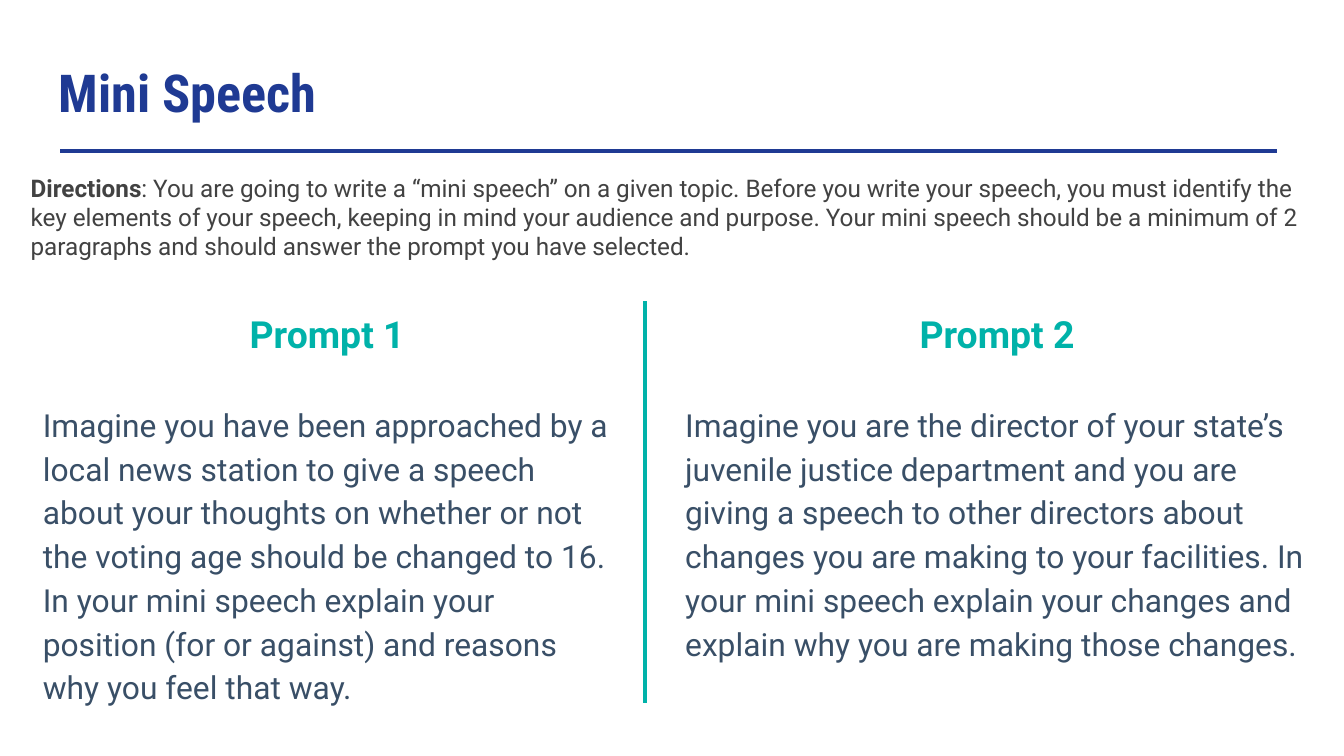
"""Build the "Mini Speech" slide with directions and two writing prompts."""
from dataclasses import dataclass

from lxml import etree
from pptx import Presentation
from pptx.dml.color import RGBColor
from pptx.enum.shapes import MSO_CONNECTOR
from pptx.enum.text import MSO_ANCHOR, PP_ALIGN
from pptx.oxml.ns import qn
from pptx.slide import Slide
from pptx.text.text import TextFrame, _Paragraph
from pptx.util import Cm, Pt

STRAIGHT = MSO_CONNECTOR.STRAIGHT
TOP = MSO_ANCHOR.TOP
LEFT = PP_ALIGN.LEFT
CENTER = PP_ALIGN.CENTER

COLORS = {
    "title": "1F3A93",
    "directions": "424242",
    "accent": "00B2A9",
    "prompt": "394F67",
}
INSET = Cm(0.25)
PROMPT_TOP = 5.51
PROMPT_SPACING = 1.15


@dataclass
class Prompt:
    heading: str
    text: str
    left: float
    width: float
    height: float


@dataclass
class Rule:
    start: tuple[float, float]
    end: tuple[float, float]
    color: str


PROMPTS = [
    Prompt(
        "Prompt 1",
        "Imagine you have been approached by a local news station to give a speech "
        "about your thoughts on whether or not the voting age should be changed to 16. "
        "In your mini speech explain your position (for or against) and reasons why "
        "you feel that way.",
        0.56, 11.25, 10.11,
    ),
    Prompt(
        "Prompt 2",
        "Imagine you are the director of your state’s juvenile justice department and "
        "you are giving a speech to other directors about changes you are making to "
        "your facilities. In your mini speech explain your changes and explain why you "
        "are making those changes.",
        12.7, 12.29, 10.74,
    ),
]
RULES = [
    Rule((1.14, 2.85), (24.13, 2.85), "title"),
    Rule((12.19, 5.69), (12.19, 13.28), "accent"),
]
DIRECTIONS = (
    ": You are going to write a “mini speech” on a given topic. Before you write your "
    "speech, you must identify the key elements of your speech, keeping in mind your "
    "audience and purpose. Your mini speech should be a minimum of 2 paragraphs and "
    "should answer the prompt you have selected."
)


def add_box(page: Slide, left: float, top: float, width: float, height: float) -> TextFrame:
    """Add a wrapping text box, measured in centimetres."""
    box = page.shapes.add_textbox(Cm(left), Cm(top), Cm(width), Cm(height))
    frame = box.text_frame
    frame.word_wrap = True
    frame.vertical_anchor = TOP
    frame.margin_left = frame.margin_right = INSET
    frame.margin_top = frame.margin_bottom = INSET
    return frame


def add_span(para: _Paragraph, text: str, *, size: float, color: str,
             bold: bool = False, font: str = "Roboto") -> None:
    """Add formatted text to a paragraph."""
    span = para.add_run()
    span.text = text
    span.font.name = font
    span.font.size = Pt(size)
    span.font.bold = bold
    span.font.color.rgb = RGBColor.from_string(COLORS[color])


def draw_prompt(page: Slide, prompt: Prompt) -> None:
    """Draw a centred heading above its prompt text."""
    frame = add_box(page, prompt.left, PROMPT_TOP, prompt.width, prompt.height)
    heading = frame.paragraphs[0]
    heading.alignment = CENTER
    heading.line_spacing = PROMPT_SPACING
    heading.space_after = Pt(23.5)
    add_span(heading, prompt.heading, size=20, color="accent", bold=True)
    para = frame.add_paragraph()
    para.alignment = LEFT
    para.line_spacing = PROMPT_SPACING
    add_span(para, prompt.text, size=17, color="prompt")


def draw_rule(page: Slide, rule: Rule) -> None:
    """Draw a straight line without a shadow."""
    ends = [Cm(value) for value in rule.start + rule.end]
    line = page.shapes.add_connector(STRAIGHT, *ends)
    line.line.color.rgb = RGBColor.from_string(COLORS[rule.color])
    line.line.width = Pt(2.25)
    etree.SubElement(line._element.spPr, qn("a:effectLst"))


def main() -> None:
    """Assemble and save the deck."""
    deck = Presentation()
    deck.slide_width = Cm(25.4)
    deck.slide_height = Cm(14.29)
    page = deck.slides.add_slide(deck.slide_layouts[6])

    title = add_box(page, 0.86, 0.89, 23.67, 1.6).paragraphs[0]
    add_span(title, "Mini Speech", size=28, color="title", bold=True,
             font="Roboto Condensed")

    directions = add_box(page, 0.33, 3.02, 24.59, 2.34).paragraphs[0]
    directions.space_after = Pt(16)
    add_span(directions, "Directions", size=13, color="directions", bold=True)
    add_span(directions, DIRECTIONS, size=13, color="directions")

    for prompt in PROMPTS:
        draw_prompt(page, prompt)
    for rule in RULES:
        draw_rule(page, rule)

    deck.save("out.pptx")


if __name__ == "__main__":
    main()
